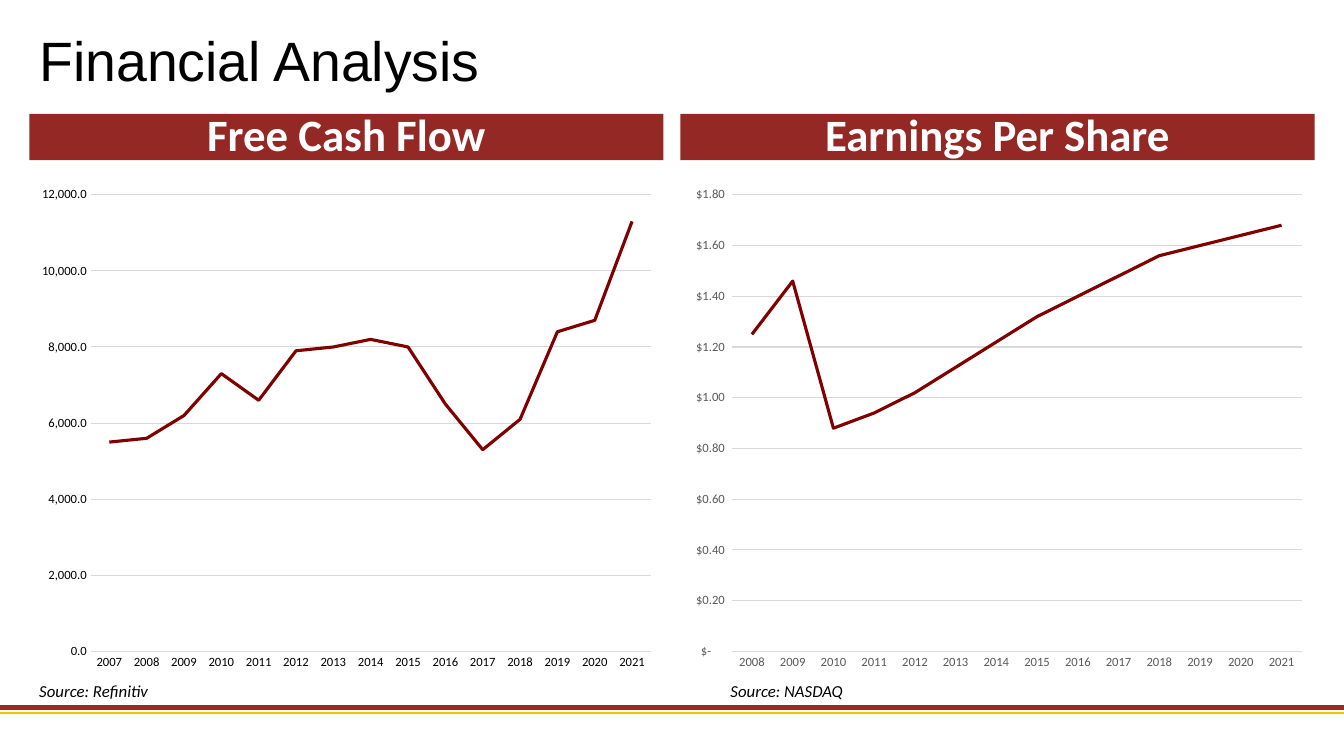
from lxml import etree
from pptx import Presentation
from pptx.chart.data import CategoryChartData
from pptx.dml.color import RGBColor
from pptx.enum.chart import XL_CHART_TYPE, XL_TICK_MARK
from pptx.enum.shapes import MSO_CONNECTOR, MSO_SHAPE
from pptx.enum.text import MSO_ANCHOR, PP_ALIGN
from pptx.oxml.ns import qn
from pptx.util import Cm, Pt

LINE = XL_CHART_TYPE.LINE
NO_TICK = XL_TICK_MARK.NONE
STRAIGHT = MSO_CONNECTOR.STRAIGHT
RECT = MSO_SHAPE.RECTANGLE
TOP, MIDDLE = MSO_ANCHOR.TOP, MSO_ANCHOR.MIDDLE
LEFT, CENTER = PP_ALIGN.LEFT, PP_ALIGN.CENTER

BLACK, WHITE, GREY, GRID = "000000", "FFFFFF", "595959", "D9D9D9"
BANNER, RULE, GOLD, MAROON = "942825", "952A27", "FFC000", "800000"
SLIDE_W, SLIDE_H = 33.87, 19.05
MARGIN, PANEL_W = 0.74, 15.98
DOLLARS = r'_("$"* #,##0.00_);_("$"* \(#,##0.00\);_("$"* "-"??_);_(@_)'

PANELS = [
    dict(heading="Free Cash Flow", left=MARGIN, first_year=2007,
         values=[5500, 5600, 6200, 7300, 6600, 7900, 8000, 8200, 8000, 6500,
                 5300, 6100, 8400, 8700, 11300],
         top=12000, step=2000, fmt="#,##0.0", label_color=BLACK,
         source="Source: Refinitiv", source_left=MARGIN),
    dict(heading="Earnings Per Share", left=17.15, first_year=2008,
         values=[1.25, 1.46, 0.88, 0.94, 1.02, 1.12, 1.22, 1.32, 1.4, 1.48,
                 1.56, 1.6, 1.64, 1.68],
         top=1.8, step=0.2, fmt=DOLLARS, label_color=GREY,
         source="Source: NASDAQ", source_left=18.16),
]


def rgb(color):
    return RGBColor.from_string(color)


class Deck:
    """Draws styled elements on the current slide."""

    def __init__(self, prs, font="Calibri"):
        self.font = font
        self.s = prs.slides.add_slide(prs.slide_layouts[6])

    def set_text(self, sp, text, size, color=BLACK, font=None, bold=False,
                 italic=False, align=LEFT, anchor=TOP, spacing=1.0):
        tf = sp.text_frame
        tf.word_wrap = True
        tf.vertical_anchor = anchor
        p = tf.paragraphs[0]
        p.text = text
        p.alignment = align
        p.line_spacing = spacing
        p.font.name = font or self.font
        p.font.size = Pt(size)
        p.font.bold = bold
        p.font.italic = italic
        p.font.color.rgb = rgb(color)

    def text(self, x, y, w, h, text, size, **style):
        sp = self.s.shapes.add_textbox(Cm(x), Cm(y), Cm(w), Cm(h))
        self.set_text(sp, text, size, **style)

    def banner(self, x, y, w, h, text):
        sp = self.s.shapes.add_shape(RECT, Cm(x), Cm(y), Cm(w), Cm(h))
        sp.shadow.inherit = False
        sp.fill.solid()
        sp.fill.fore_color.rgb = rgb(BANNER)
        sp.line.fill.background()
        self.set_text(sp, text, 32, color=WHITE, bold=True, align=CENTER,
                      anchor=MIDDLE, spacing=0.9)

    def rule(self, y, color, width):
        ln = self.s.shapes.add_connector(STRAIGHT, 0, Cm(y), Cm(SLIDE_W), Cm(y))
        ln.line.color.rgb = rgb(color)
        ln.line.width = Pt(width)
        etree.SubElement(ln._element.spPr, qn("a:effectLst"))

    def style_axis(self, axis, color):
        axis.major_tick_mark = axis.minor_tick_mark = NO_TICK
        font = axis.tick_labels.font
        font.name = self.font
        font.size = Pt(9)
        font.color.rgb = rgb(color)

    def line_chart(self, x, y, w, h, first_year, values, top, step, fmt, color):
        data = CategoryChartData()
        data.categories = [str(first_year + i) for i in range(len(values))]
        data.add_series("Series 1", values)
        chart = self.s.shapes.add_chart(
            LINE, Cm(x), Cm(y), Cm(w), Cm(h), data).chart
        chart.has_legend = chart.has_title = False
        chart.font.name = self.font
        chart.font.size = Pt(10)
        chart.font.color.rgb = rgb(BLACK)

        plot = chart.plots[0]
        plot.vary_by_categories = False
        series = plot.series[0]
        series.smooth = False
        series.format.line.color.rgb = rgb(MAROON)
        series.format.line.width = Pt(2.25)

        years, amounts = chart.category_axis, chart.value_axis
        for axis in (years, amounts):
            self.style_axis(axis, color)
        amounts.minimum_scale = 0
        amounts.maximum_scale = top
        amounts.major_unit = step
        amounts.tick_labels.number_format = fmt
        amounts.tick_labels.number_format_is_linked = False
        amounts.format.line.fill.background()
        for line in (years.format.line, amounts.major_gridlines.format.line):
            line.color.rgb = rgb(GRID)
            line.width = Pt(0.75)


def main():
    prs = Presentation()
    prs.slide_width, prs.slide_height = Cm(SLIDE_W), Cm(SLIDE_H)
    deck = Deck(prs)
    deck.rule(17.83, RULE, 3)
    deck.rule(17.96, GOLD, 1.5)
    deck.text(MARGIN, 0.81, 32.36, 1.6, "Financial Analysis", 39.6,
              font="Arial", anchor=MIDDLE, spacing=0.9)
    for panel in PANELS:
        deck.banner(panel["left"], 2.87, PANEL_W, 1.17, panel["heading"])
        deck.line_chart(panel["left"], 4.47, PANEL_W, 12.67,
                        panel["first_year"], panel["values"], panel["top"],
                        panel["step"], panel["fmt"], panel["label_color"])
        deck.text(panel["source_left"], 17.04, 16.99, 0.76, panel["source"],
                  12, italic=True)
    prs.save("out.pptx")


if __name__ == "__main__":
    main()
